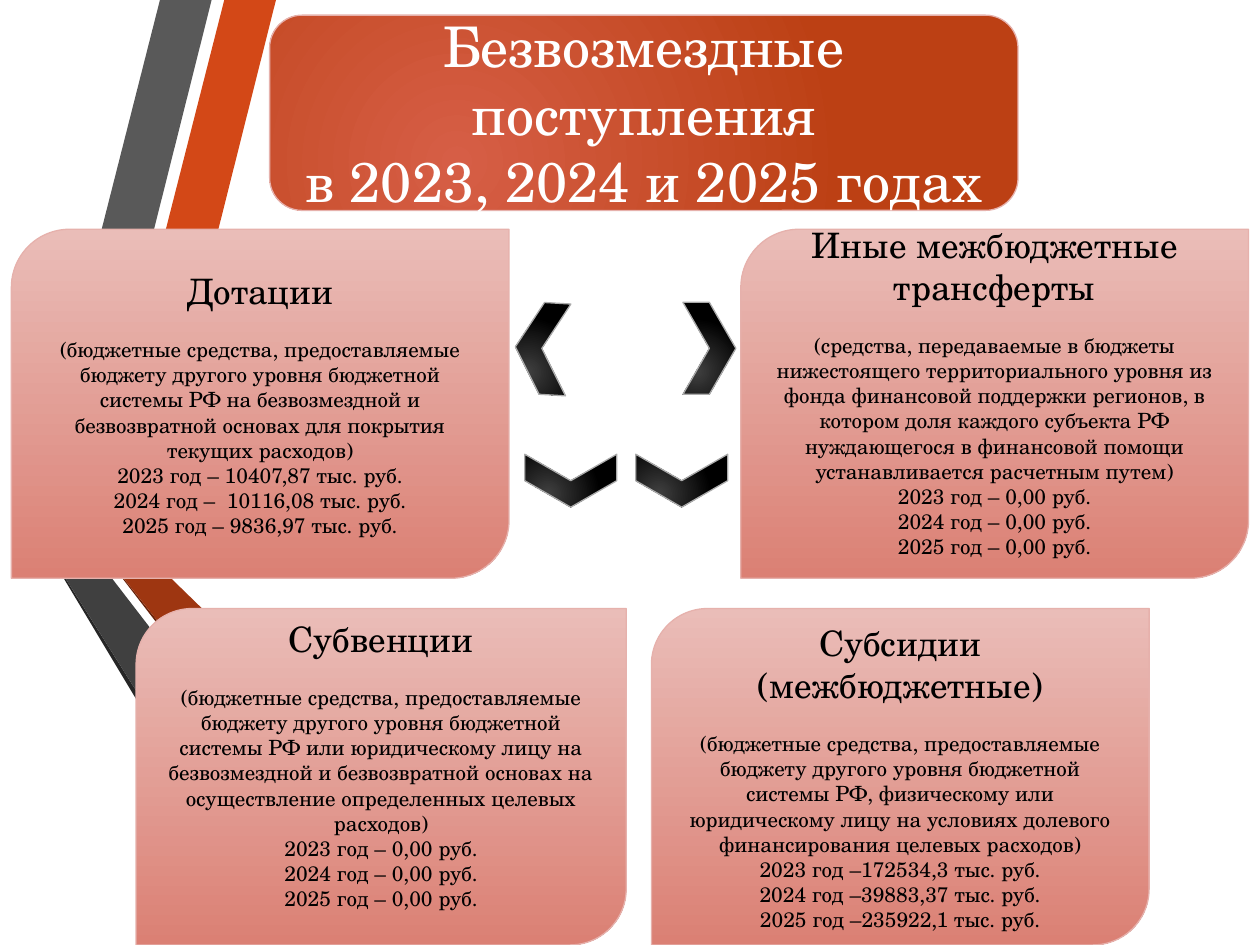
from lxml.etree import SubElement
from pptx import Presentation
from pptx.dml.color import RGBColor
from pptx.enum.shapes import MSO_SHAPE
from pptx.enum.text import MSO_ANCHOR, PP_ALIGN
from pptx.oxml.ns import qn
from pptx.util import Inches, Pt

FONT = "TeX Gyre Schola"
YEARS = (2023, 2024, 2025)
TITLE = ["Безвозмездные поступления", "в 2023, 2024 и 2025 годах"]
LEAD = "(бюджетные средства, предоставляемые бюджету другого уровня бюджетной системы РФ"
TOP, LOW = (1.82, 2.77), (4.83, 2.67)
GAP = 14.4

PANELS = [
    ("Дотации", LEAD + " на безвозмездной и безвозвратной основах для покрытия текущих расходов)",
     ["– 10407,87 тыс.", "–  10116,08 тыс.", "– 9836,97 тыс."], 0.09, 3.95, TOP, 0),
    ("Субвенции", LEAD + " или юридическому лицу на безвозмездной и безвозвратной основах"
     " на осуществление определенных целевых расходов)",
     ["– 0,00"] * 3, 1.08, 3.89, LOW, GAP),
    ("Субсидии (межбюджетные)", LEAD + ", физическому или юридическому лицу на условиях"
     " долевого финансирования целевых расходов)",
     ["–172534,3 тыс.", "–39883,37 тыс.", "–235922,1 тыс."], 5.17, 3.95, LOW, 0),
    ("Иные межбюджетные трансферты", "(средства, передаваемые в бюджеты нижестоящего"
     " территориального уровня из фонда финансовой поддержки регионов, в котором доля"
     " каждого субъекта РФ нуждающегося в финансовой помощи устанавливается расчетным путем)",
     ["– 0,00"] * 3, 5.88, 4.03, TOP, GAP),
]
ARROWS = [(5.42, 2.4, 0), (5.2, 3.45, 90), (4.32, 3.45, 90), (4.09, 2.4, 183.4)]
RIBBONS = [
    ("D34817", [(0.7, 4.24), (1.1, 4.34), (2.19, 0), (1.78, 0)]),
    ("595959", [(1.68, 0), (1.27, 0), (0.22, 4.13), (0.62, 4.22)]),
    ("262626", [(0.23, 4.13), (2.25, 7.5), (2.35, 7.5)]),
    ("69240C", [(3.3, 7.5), (0.71, 4.25), (3.21, 7.5)]),
    ("9E3611", [(0.7, 4.24), (0.71, 4.25), (3.3, 7.5), (4.35, 7.5), (1.1, 4.34)]),
    ("404040", [(3.13, 7.5), (0.68, 4.32), (0.62, 4.22), (0.22, 4.13), (0.23, 4.13), (2.35, 7.5)]),
]


def color(code):
    return RGBColor.from_string(code)


def shade(shape, stops, line, radial):
    shape.shadow.inherit = False
    shape.line.color.rgb = color(line)
    shape.line.width = Pt(0.75)
    shape.fill.gradient()
    shape.fill.gradient_angle = 270
    for stop, code in zip(shape.fill.gradient_stops, stops):
        stop.color.rgb = color(code)
    if radial:
        grad = shape.element.spPr.find(qn("a:gradFill"))
        grad.remove(grad.find(qn("a:lin")))
        focus = SubElement(grad, qn("a:path"), {"path": "circle"})
        SubElement(focus, qn("a:fillToRect"), l="50000", t="100000", r="100000", b="50000")


def block(slide, kind, box, stops, line, radial=False):
    shape = slide.shapes.add_shape(kind, *map(Inches, box))
    shade(shape, stops, line, radial)
    return shape


def write(shape, rows, ink):
    frame = shape.text_frame
    frame.word_wrap = True
    frame.vertical_anchor = MSO_ANCHOR.MIDDLE
    for i, (text, size, after) in enumerate(rows):
        para = frame.add_paragraph() if i else frame.paragraphs[0]
        para.alignment = PP_ALIGN.CENTER
        para.space_after = Pt(after)
        run = para.add_run()
        run.text = text
        run.font.size = Pt(size)
        run.font.name = FONT
        run.font.color.rgb = color(ink)


def ribbon(slide, code, points):
    spots = [(round(x * 100), round(y * 100)) for x, y in points]
    pen = slide.shapes.build_freeform(*spots[0], scale=Inches(0.01))
    pen.add_line_segments(spots[1:], close=True)
    shape = pen.convert_to_shape()
    shape.shadow.inherit = False
    shape.fill.solid()
    shape.fill.fore_color.rgb = color(code)
    shape.line.fill.background()


def main():
    """Build the slide on grants in three budget years."""
    deck = Presentation()
    deck.slide_width, deck.slide_height = Inches(10), Inches(7.5)
    slide = deck.slides.add_slide(deck.slide_layouts[6])
    for code, points in RIBBONS:
        ribbon(slide, code, points)
    head = block(slide, MSO_SHAPE.ROUNDED_RECTANGLE, (2.14, 0.12, 5.94, 1.55),
                 ("D65E46", "BC4014"), "E6B1AC", True)
    write(head, [(text, 32, 0) for text in TITLE], "FFFFFF")
    for name, note, sums, left, width, (top, height), pad in PANELS:
        panel = block(slide, MSO_SHAPE.ROUND_2_DIAG_RECTANGLE, (left, top, width, height),
                      ("EABDB8", "DB8074"), "E6B1AC")
        years = [(f"{year} год {value} руб.", 12, 0) for year, value in zip(YEARS, sums)]
        write(panel, [(name, 20, GAP), (note, 12, 0)] + years, "000000")
        panel.text_frame.margin_bottom = Inches(0.05) + Pt(pad)
    for left, top, turn in ARROWS:
        arrow = block(slide, MSO_SHAPE.CHEVRON, (left, top, 0.42, 0.73),
                      ("404040", "000000"), "ABABAB", True)
        arrow.rotation = turn
    deck.save("out.pptx")


if __name__ == "__main__":
    main()
